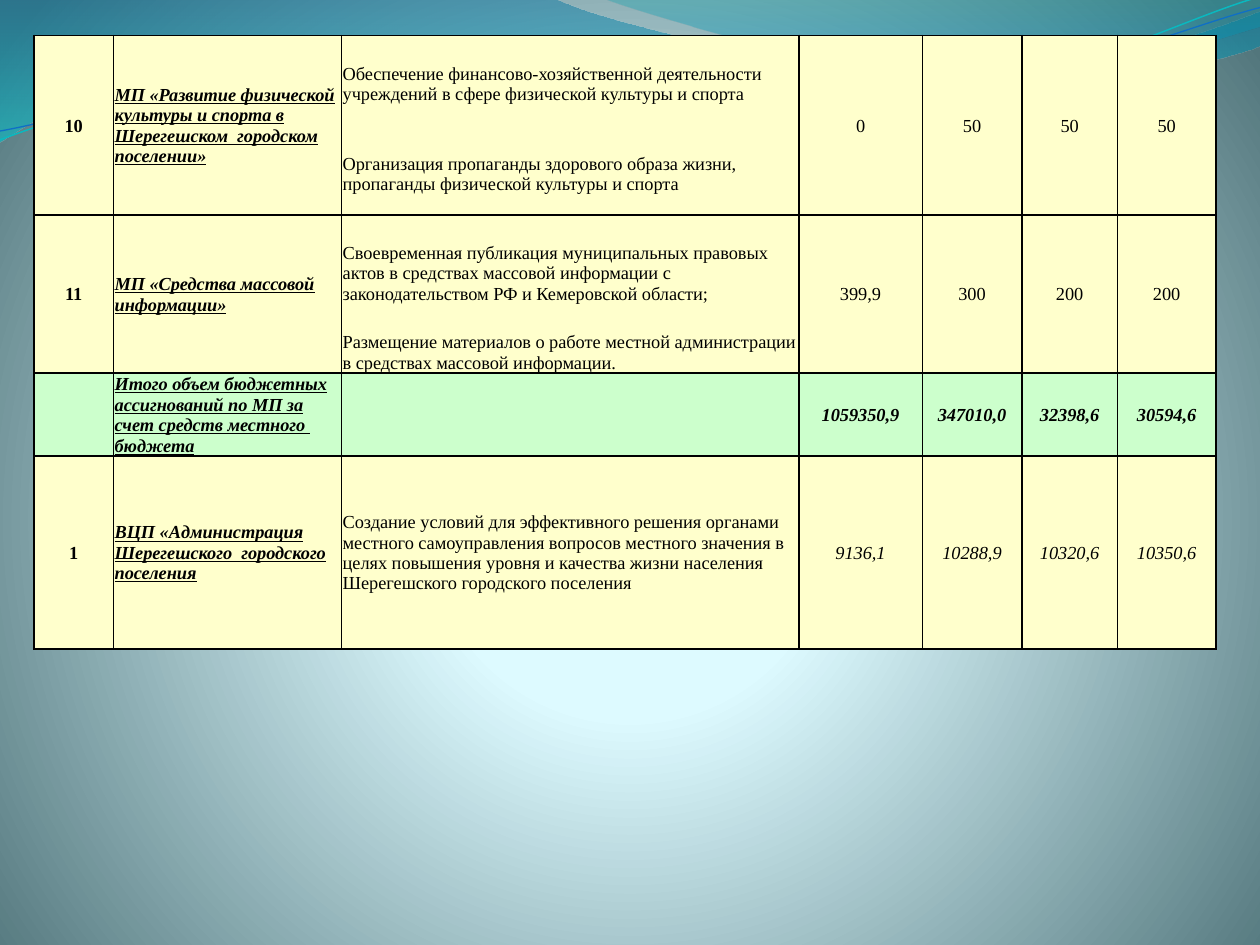
from dataclasses import dataclass

import lxml.etree
import pptx
import pptx.dml.color
import pptx.enum.text
import pptx.oxml
import pptx.oxml.ns
import pptx.util

Inches = pptx.util.Inches
Pt = pptx.util.Pt
qn = pptx.oxml.ns.qn
Point = tuple[float, float]
Curve = tuple[Point, Point, Point]

COLORS = {
    "text": "000000", "border": "000000", "program": "FFFFCC", "total": "CCFFCC",
    "glow": "DEFBFF", "glow_edge": "DDFAFF", "dusk": "52767C",
    "deep_blue": "0074A1", "aqua": "00C6CF", "teal": "00A1A9", "azure": "008BBF",
    "aqua_line": "0AB8BF", "blue_line": "0F6FC6",
}
FONT = "Times New Roman"
COLUMN_WIDTHS = (0.63, 1.81, 3.63, 0.98, 0.79, 0.76, 0.78)
TASK_COLUMN = 2
UNITS_PER_INCH = 100
LINEAR = '<a:lin ang="5400000" scaled="1"/>'
CIRCLE = ('<a:path path="circle"><a:fillToRect l="10000" t="110000" '
          'r="10000" b="100000"/></a:path>')


@dataclass
class Stop:
    position: int
    color: str
    opacity: int = 100


@dataclass
class Wave:
    """A ribbon when it has stops, otherwise a thin line; each segment is a point or a curve."""
    start: Point
    segments: list[Point | Curve]
    stops: tuple[Stop, ...] = ()
    line_color: str = ""
    line_width: float = 0


@dataclass
class Program:
    number: str
    name: str
    tasks: tuple[str, ...]
    amounts: tuple[str, ...]
    heights: tuple[float, ...]
    fill: str = "program"
    bold_amounts: bool = False
    italic_amounts: bool = False


WAVES = [
    Wave((0, 0), [
        (4.4, -0.01),
        ((4.76, 0.17), (6.64, 0.63), (7.58, 0.63)),
        ((8.53, 0.63), (9.58, 0.26), (10, 0.09)),
        (10.01, 0.36),
        ((9.83, 0.44), (8.7, 0.76), (7.46, 0.75)),
        ((6.22, 0.75), (3.82, 0.28), (2.57, 0.34)),
        ((1.29, 0.36), (0.46, 0.83), (-0.01, 1.13)),
    ], (Stop(0, "deep_blue", 45), Stop(100, "aqua", 55))),
    Wave((4.79, -0.01), [
        ((5.09, 0.11), (6.82, 0.62), (7.69, 0.65)),
        ((8.56, 0.69), (9.61, 0.32), (10, 0.21)),
        (10, 0),
    ], (Stop(0, "teal", 30), Stop(80, "azure", 45))),
    Wave((0, 1.11), [
        ((0.48, 0.93), (1.58, 0.57), (2.77, 0.52)),
        ((3.95, 0.47), (5.93, 0.89), (7.13, 0.8)),
        ((8.33, 0.71), (9.38, 0.15), (9.98, -0.02)),
    ], line_color="aqua_line", line_width=0.85),
    Wave((0, 1.04), [
        ((0.47, 0.96), (1.64, 0.61), (2.83, 0.56)),
        ((4.03, 0.51), (5.97, 0.84), (7.17, 0.75)),
        ((8.36, 0.67), (9.41, 0.21), (10, 0.06)),
    ], line_color="blue_line", line_width=0.75),
]

PROGRAMS = [
    Program("10", "МП «Развитие физической культуры и спорта в Шерегешском  городском поселении»",
            ("Обеспечение финансово-хозяйственной деятельности учреждений в сфере "
             "физической культуры и спорта",
             "Организация пропаганды здорового образа жизни, пропаганды физической "
             "культуры и спорта"),
            ("0", "50", "50", "50"), (0.77, 0.65)),
    Program("11", "МП «Средства массовой информации»",
            ("Своевременная публикация муниципальных правовых актов в средствах массовой "
             "информации с законодательством РФ и Кемеровской области;",
             "Размещение материалов о работе местной администрации в средствах массовой "
             "информации."),
            ("399,9", "300", "200", "200"), (0.92, 0.33)),
    Program("", "Итого объем бюджетных ассигнований по МП за счет средств местного  бюджета",
            ("",), ("1059350,9", "347010,0", "32398,6", "30594,6"), (0.66,),
            "total", bold_amounts=True, italic_amounts=True),
    Program("1", "ВЦП «Администрация Шерегешского  городского поселения",
            ("Создание условий для эффективного решения органами местного самоуправления "
             "вопросов местного значения в целях повышения уровня и качества жизни населения "
             "Шерегешского городского поселения",),
            ("9136,1", "10288,9", "10320,6", "10350,6"), (1.53,), italic_amounts=True),
]


def rgb(name: str) -> pptx.dml.color.RGBColor:
    return pptx.dml.color.RGBColor.from_string(COLORS[name])


def set_gradient(fill, parent, stops: tuple[Stop, ...], direction: str) -> None:
    """Swap the default gradient in parent for one with opacity and a direction."""
    fill.gradient()
    stop_xml = "".join(
        f'<a:gs pos="{stop.position * 1000}"><a:srgbClr val="{COLORS[stop.color]}">'
        f'<a:alpha val="{stop.opacity * 1000}"/></a:srgbClr></a:gs>' for stop in stops)
    gradient = pptx.oxml.parse_xml(
        f'<a:gradFill {pptx.oxml.ns.nsdecls("a")} rotWithShape="1">'
        f'<a:gsLst>{stop_xml}</a:gsLst>{direction}</a:gradFill>')
    default = parent.find(".//" + qn("a:gradFill"))
    default.getparent().replace(default, gradient)


def to_units(point: Point) -> tuple[int, int]:
    return round(point[0] * UNITS_PER_INCH), round(point[1] * UNITS_PER_INCH)


def bend_segments(shape, segments: list[Point | Curve], origin: tuple[int, int]) -> None:
    """Turn the straight segments that stand for curves into cubic ones."""
    lines = list(shape.element.iter(qn("a:lnTo")))
    for line, segment in zip(lines, segments):
        if len(segment) == 2:
            continue
        cubic = lxml.etree.Element(qn("a:cubicBezTo"))
        for x, y in map(to_units, segment):
            lxml.etree.SubElement(cubic, qn("a:pt"), x=str(x - origin[0]), y=str(y - origin[1]))
        line.getparent().replace(line, cubic)


def draw_wave(slide, wave: Wave) -> None:
    ends = [to_units(segment if len(segment) == 2 else segment[-1]) for segment in wave.segments]
    start = to_units(wave.start)
    origin = tuple(min(values) for values in zip(start, *ends))
    builder = slide.shapes.build_freeform(*start, scale=Inches(1) / UNITS_PER_INCH)
    builder.add_line_segments(ends, close=bool(wave.stops))
    shape = builder.convert_to_shape()
    bend_segments(shape, wave.segments, origin)
    shape.shadow.inherit = False
    if wave.stops:
        set_gradient(shape.fill, shape.element.spPr, wave.stops, LINEAR)
        shape.line.fill.background()
    else:
        shape.fill.background()
        shape.line.color.rgb = rgb(wave.line_color)
        shape.line.width = Pt(wave.line_width)


def style_cell(cell, fill: str, open_sides: str) -> None:
    cell.margin_left = cell.margin_right = cell.margin_top = Inches(0.01)
    cell.margin_bottom = 0
    cell.vertical_anchor = pptx.enum.text.MSO_ANCHOR.MIDDLE
    cell.fill.solid()
    cell.fill.fore_color.rgb = rgb(fill)
    properties = cell._tc.get_or_add_tcPr()
    for index, side in enumerate("LRTB"):
        border = lxml.etree.Element(qn(f"a:ln{side}"), w=str(Pt(1)))
        if side in open_sides:
            lxml.etree.SubElement(border, qn("a:noFill"))
        else:
            solid = lxml.etree.SubElement(border, qn("a:solidFill"))
            lxml.etree.SubElement(solid, qn("a:srgbClr"), val=COLORS["border"])
        properties.insert(index, border)


def write_cell(cell, text: str, centered: bool = True, bold: bool = False,
               italic: bool = False, underline: bool = False) -> None:
    if not text:
        return
    cell.text_frame.text = text
    paragraph = cell.text_frame.paragraphs[0]
    alignment = pptx.enum.text.PP_ALIGN
    paragraph.alignment = alignment.CENTER if centered else alignment.LEFT
    font = paragraph.runs[0].font
    font.name, font.size = FONT, Pt(10.5)
    font.bold, font.italic, font.underline = bold, italic, underline
    font.color.rgb = rgb("text")


def fill_program(table, top: int, program: Program) -> None:
    last = top + len(program.heights) - 1
    for row in range(top, last + 1):
        table.rows[row].height = Inches(program.heights[row - top])
        for column in range(len(COLUMN_WIDTHS)):
            open_sides = ""
            if column == TASK_COLUMN:
                open_sides = ("T" if row > top else "") + ("B" if row < last else "")
            style_cell(table.cell(row, column), program.fill, open_sides)
        write_cell(table.cell(row, TASK_COLUMN), program.tasks[row - top], centered=False)
    if last > top:
        for column in range(len(COLUMN_WIDTHS)):
            if column != TASK_COLUMN:
                table.cell(top, column).merge(table.cell(last, column))
    write_cell(table.cell(top, 0), program.number, bold=True)
    write_cell(table.cell(top, 1), program.name, False, True, True, True)
    for column, amount in enumerate(program.amounts, TASK_COLUMN + 1):
        write_cell(table.cell(top, column), amount,
                   bold=program.bold_amounts, italic=program.italic_amounts)


def draw_budget_table(slide) -> None:
    heights = [height for program in PROGRAMS for height in program.heights]
    table = slide.shapes.add_table(
        len(heights), len(COLUMN_WIDTHS), Inches(0.27), Inches(0.28),
        Inches(sum(COLUMN_WIDTHS)), Inches(sum(heights))).table
    table.first_row = table.horz_banding = False
    for column, width in zip(table.columns, COLUMN_WIDTHS):
        column.width = Inches(width)
    top = 0
    for program in PROGRAMS:
        fill_program(table, top, program)
        top += len(program.heights)


def main() -> None:
    presentation = pptx.Presentation()
    presentation.slide_width, presentation.slide_height = Inches(10), Inches(7.5)
    slide = presentation.slides.add_slide(presentation.slide_layouts[6])
    set_gradient(slide.background.fill, slide.element,
                 (Stop(0, "glow"), Stop(25, "glow_edge"), Stop(100, "dusk")), CIRCLE)
    for wave in WAVES:
        draw_wave(slide, wave)
    draw_budget_table(slide)
    presentation.save("out.pptx")


if __name__ == "__main__":
    main()
